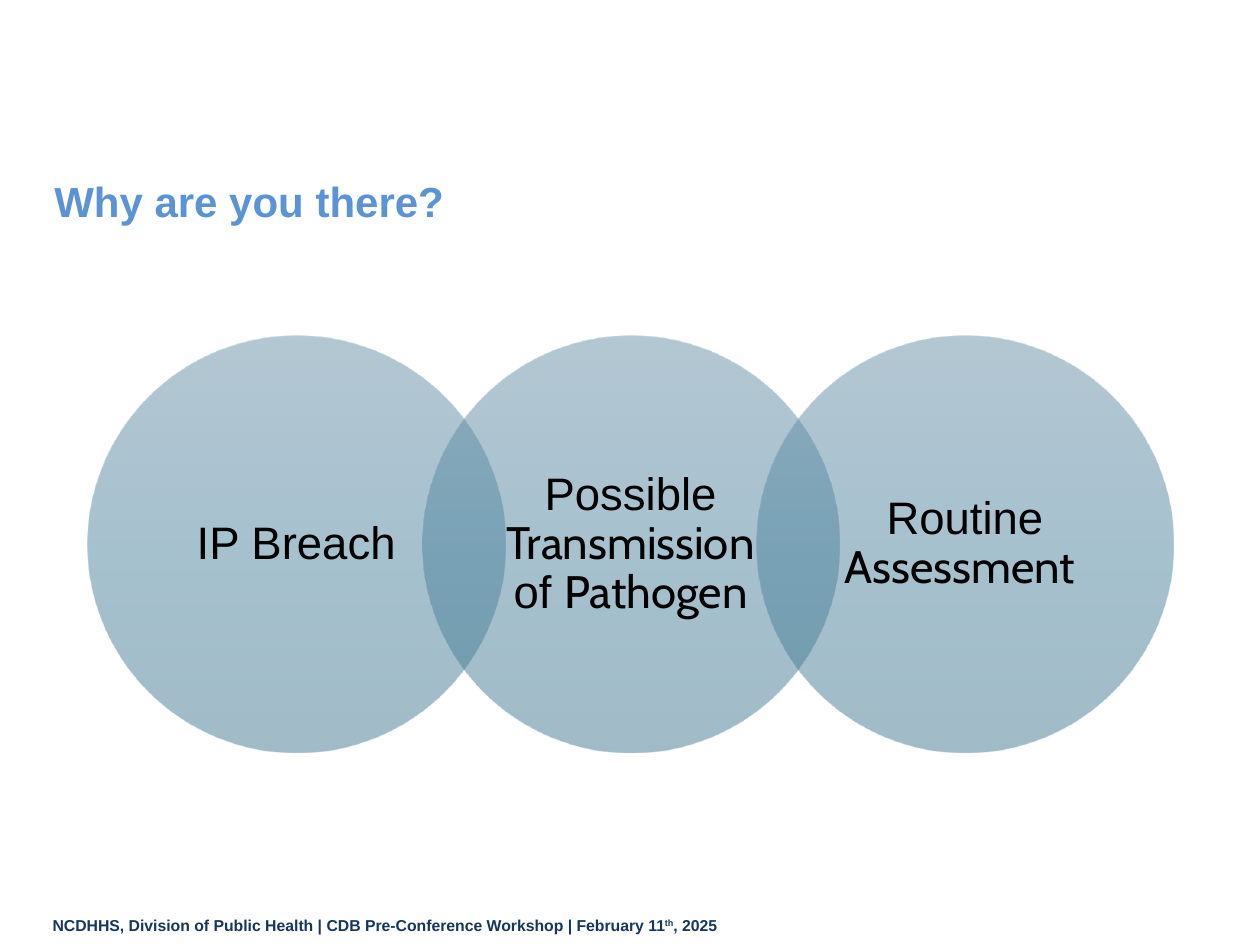
from dataclasses import dataclass

import pptx
import pptx.dml.color
import pptx.enum.shapes
import pptx.enum.text
import pptx.oxml
import pptx.oxml.ns
import pptx.util
from pptx.util import Cm, Pt

BODY_FONT = "Arial"
ACCENT_FONT = "Cabin"
GRADIENT = ((0, "6992A8"), (50, "4E85A0"), (100, "427891"))
OPACITY = 50
DIAMETER = 8.41
FIRST_LEFT = 1.77
CIRCLE_TOP = 6.77
PITCH = 6.74


@dataclass
class TextRun:
    text: str
    font: str = BODY_FONT


REASONS = (
    (TextRun("IP Breach"),),
    (
        TextRun("Possible "),
        TextRun("Transmission", ACCENT_FONT),
        TextRun(" of "),
        TextRun("Pathogen", ACCENT_FONT),
    ),
    (TextRun("Routine "), TextRun("Assessment ", ACCENT_FONT)),
)


def color(value: str) -> pptx.dml.color.RGBColor:
    return pptx.dml.color.RGBColor.from_string(value)


def format_font(font, size: float, value: str, bold: bool = False) -> None:
    font.name = BODY_FONT
    font.size = Pt(size)
    font.bold = bold
    font.color.rgb = color(value)


def fill_with_gradient(shape) -> None:
    """Apply the translucent gradient, running from top to bottom."""
    shape.fill.gradient()
    shape.fill.gradient_angle = 270
    stop_list = next(shape.element.iter(pptx.oxml.ns.qn("a:gsLst")))
    for stop in list(stop_list):
        stop_list.remove(stop)
    for position, value in GRADIENT:
        stop_list.append(pptx.oxml.parse_xml(
            f'<a:gs {pptx.oxml.ns.nsdecls("a")} pos="{position * 1000}">'
            f'<a:srgbClr val="{value}"><a:alpha val="{OPACITY * 1000}"/></a:srgbClr></a:gs>'
        ))


def add_circle(slide, left: float, runs: tuple[TextRun, ...]) -> None:
    circle = slide.shapes.add_shape(
        pptx.enum.shapes.MSO_SHAPE.OVAL,
        Cm(left), Cm(CIRCLE_TOP), Cm(DIAMETER), Cm(DIAMETER),
    )
    circle.shadow.inherit = False
    circle.line.fill.background()
    fill_with_gradient(circle)
    frame = circle.text_frame
    frame.word_wrap = True
    frame.vertical_anchor = pptx.enum.text.MSO_ANCHOR.MIDDLE
    frame.margin_left = frame.margin_right = Cm(0.43)
    frame.margin_top = frame.margin_bottom = Cm(0.1)
    paragraph = frame.paragraphs[0]
    paragraph.alignment = pptx.enum.text.PP_ALIGN.CENTER
    paragraph.line_spacing = 0.9
    for text_run in runs:
        run = paragraph.add_run()
        run.text = text_run.text
        format_font(run.font, 26, "000000")
        run.font.name = text_run.font


def set_title(slide) -> None:
    title = slide.shapes.title
    title.left, title.top, title.width, title.height = Cm(0.84), Cm(3.53), Cm(23.8), Cm(1.52)
    frame = title.text_frame
    frame.text = "Why are you there?"
    frame.vertical_anchor = pptx.enum.text.MSO_ANCHOR.TOP
    frame.auto_size = pptx.enum.text.MSO_AUTO_SIZE.NONE
    paragraph = frame.paragraphs[0]
    paragraph.alignment = pptx.enum.text.PP_ALIGN.LEFT
    paragraph.line_spacing = 0.9
    format_font(paragraph.font, 24, "5C93D5", bold=True)


def add_footer(slide) -> None:
    footer = slide.shapes.add_textbox(Cm(0.81), Cm(18.34), Cm(22.2), Cm(0.74))
    footer.text_frame.word_wrap = True
    paragraph = footer.text_frame.paragraphs[0]
    format_font(paragraph.font, 9, "15365E", bold=True)
    start = "NCDHHS, Division of Public Health | CDB Pre-Conference Workshop | February 11"
    for text, baseline in ((start, 0), ("th", 30), (", 2025", 0)):
        run = paragraph.add_run()
        run.text = text
        if baseline:
            run.font._element.set("baseline", str(baseline * 1000))


def main() -> None:
    presentation = pptx.Presentation()
    presentation.slide_width, presentation.slide_height = Cm(25.4), Cm(19.05)
    slide = presentation.slides.add_slide(presentation.slide_layouts[5])
    add_footer(slide)
    set_title(slide)
    for index, runs in enumerate(REASONS):
        add_circle(slide, FIRST_LEFT + index * PITCH, runs)
    presentation.save("out.pptx")


if __name__ == "__main__":
    main()
